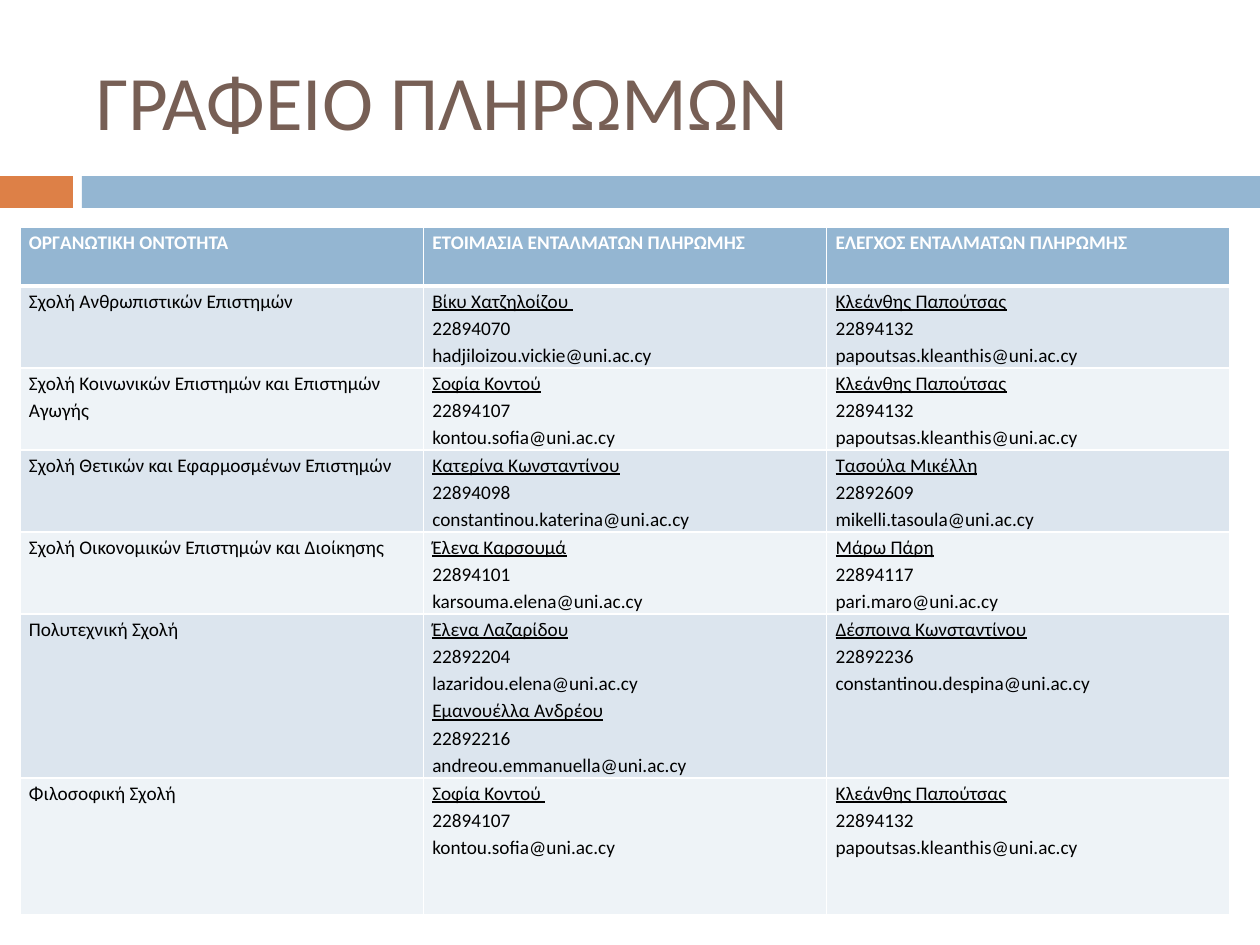
import pptx
import pptx.util
import pptx.dml.color
import pptx.enum.shapes
import pptx.enum.text
import lxml.etree

NS = "http://schemas.openxmlformats.org/drawingml/2006/main"
SCALE = 914400 / 126
MAIL = "@uni.ac.cy"
THEME = {
    "font": "Calibri",
    "title": "775F55",
    "accent": "DD8047",
    "bar": "94B6D2",
    "white": "FFFFFF",
    "black": "000000",
    "bands": ("DCE5EE", "EEF3F7"),
    "big": 44,
    "small": 11,
}


def px(num):
    return round(num * SCALE)


def write(para, text, size, color, bold=False, under=False):
    run = para.add_run()
    run.text = text
    font = run.font
    font.name = THEME["font"]
    font.size = pptx.util.Pt(size)
    font.color.rgb = pptx.dml.color.RGBColor.from_string(color)
    font.bold = bold
    font.underline = under


deck = pptx.Presentation()
deck.slide_width = px(1260)
deck.slide_height = px(945)
slide = deck.slides.add_slide(deck.slide_layouts[6])

for left, width, color in ((0, 73, THEME["accent"]), (82, 1178, THEME["bar"])):
    bar = slide.shapes.add_shape(
        pptx.enum.shapes.MSO_SHAPE.RECTANGLE, px(left), px(176), px(width), px(32))
    bar.shadow.inherit = False
    bar.fill.solid()
    bar.fill.fore_color.rgb = pptx.dml.color.RGBColor.from_string(color)
    bar.line.fill.background()

title = slide.shapes.add_textbox(px(84), px(32), px(1124), px(136)).text_frame
title.word_wrap = True
title.vertical_anchor = pptx.enum.text.MSO_ANCHOR.MIDDLE
write(title.paragraphs[0], "ΓΡΑΦΕΙΟ ΠΛΗΡΩΜΩΝ", THEME["big"], THEME["title"])

heads = (
    "ΟΡΓΑΝΩΤΙΚΗ ΟΝΤΟΤΗΤΑ",
    "ΕΤΟΙΜΑΣΙΑ ΕΝΤΑΛΜΑΤΩΝ ΠΛΗΡΩΜΗΣ",
    "ΕΛΕΓΧΟΣ ΕΝΤΑΛΜΑΤΩΝ ΠΛΗΡΩΜΗΣ",
)
check = ("Κλεάνθης Παπούτσας", "22894132", "papoutsas.kleanthis")
schools = (
    ("Σχολή Ανθρωπιστικών Επιστημών",
     [("Βίκυ Χατζηλοίζου ", "22894070", "hadjiloizou.vickie")],
     [check]),
    ("Σχολή Κοινωνικών Επιστημών και Επιστημών Αγωγής",
     [("Σοφία Κοντού", "22894107", "kontou.sofia")],
     [check]),
    ("Σχολή Θετικών και Εφαρμοσμένων Επιστημών",
     [("Κατερίνα Κωνσταντίνου", "22894098", "constantinou.katerina")],
     [("Τασούλα Μικέλλη", "22892609", "mikelli.tasoula")]),
    ("Σχολή Οικονομικών Επιστημών και Διοίκησης",
     [("Έλενα Καρσουμά", "22894101", "karsouma.elena")],
     [("Μάρω Πάρη", "22894117", "pari.maro")]),
    ("Πολυτεχνική Σχολή",
     [("Έλενα Λαζαρίδου", "22892204", "lazaridou.elena"),
      ("Εμανουέλλα Ανδρέου", "22892216", "andreou.emmanuella")],
     [("Δέσποινα Κωνσταντίνου", "22892236", "constantinou.despina")]),
    ("Φιλοσοφική Σχολή",
     [("Σοφία Κοντού ", "22894107", "kontou.sofia")],
     [check]),
)

rows = [[[(head, False)] for head in heads]]
for school, *staff in schools:
    row = [[(school, False)]]
    for group in staff:
        lines = []
        for name, phone, user in group:
            lines += [(name, True), (phone, False), (user + MAIL, False)]
        row.append(lines)
    rows.append(row)

highs = (59, 82, 82, 82, 82, 164, 137)
table = slide.shapes.add_table(
    len(rows), len(heads), px(20), px(227), px(1210), px(sum(highs))).table
for col in table.columns:
    col.width = px(1210) // len(heads)

for r, row in enumerate(rows):
    table.rows[r].height = px(highs[r])
    fill = THEME["bands"][(r - 1) % 2] if r else THEME["bar"]
    color = THEME["black"] if r else THEME["white"]
    for c, lines in enumerate(row):
        cell = table.cell(r, c)
        cell.margin_left = cell.margin_right = px(9)
        cell.margin_top = cell.margin_bottom = 0
        props = cell._tc.get_or_add_tcPr()
        for side in "LRTB":
            thick = 3 if (r, side) in ((0, "B"), (1, "T")) else 1
            edge = lxml.etree.SubElement(
                props, f"{{{NS}}}ln{side}", w=str(pptx.util.Pt(thick)))
            solid = lxml.etree.SubElement(edge, f"{{{NS}}}solidFill")
            lxml.etree.SubElement(solid, f"{{{NS}}}srgbClr", val=THEME["white"])
        cell.fill.solid()
        cell.fill.fore_color.rgb = pptx.dml.color.RGBColor.from_string(fill)
        frame = cell.text_frame
        for i, (text, under) in enumerate(lines):
            para = frame.add_paragraph() if i else frame.paragraphs[0]
            para.line_spacing = 1.15
            write(para, text, THEME["small"], color, bold=r == 0, under=under)

deck.save("out.pptx")
